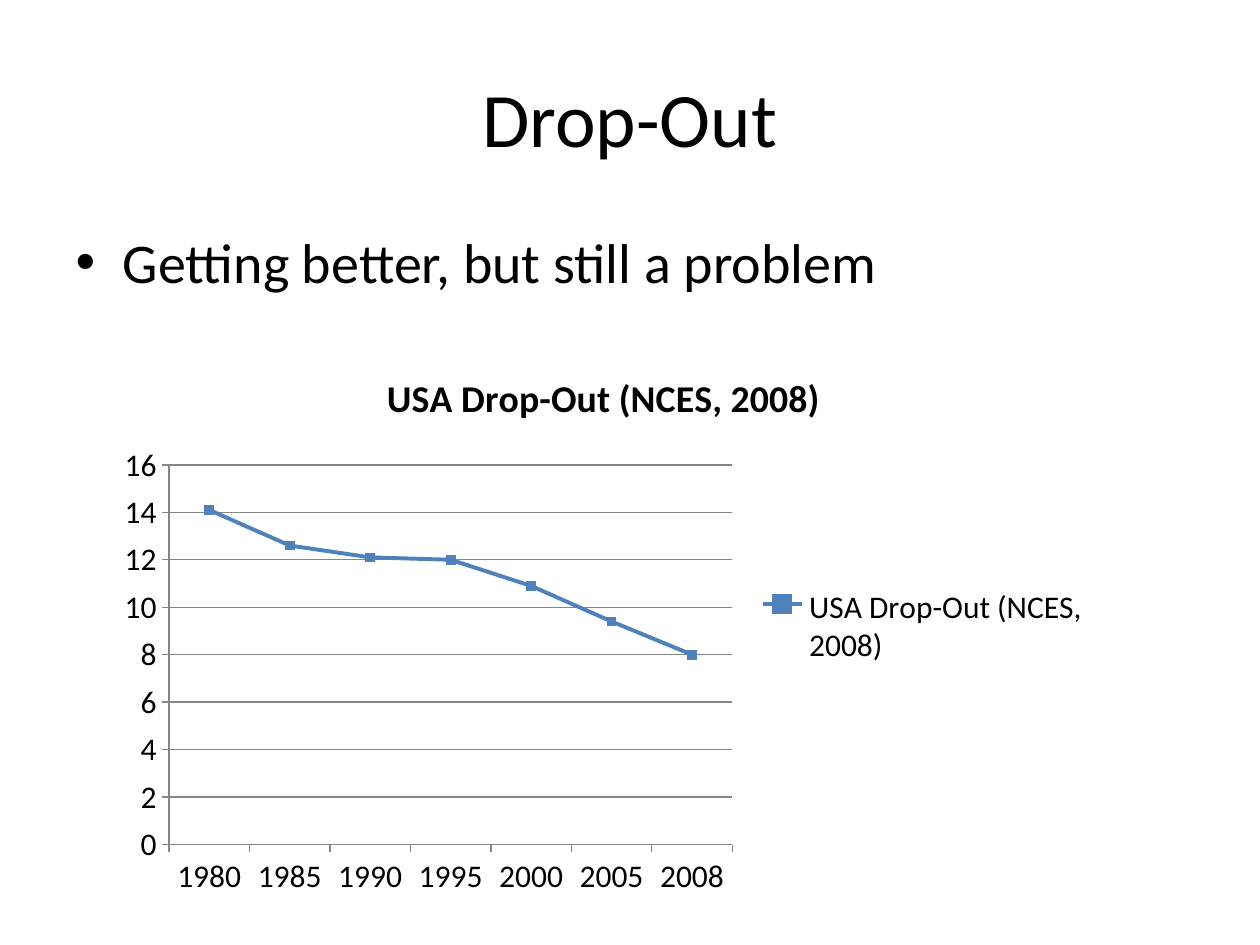
from lxml.etree import SubElement
from pptx import Presentation
from pptx.chart.data import CategoryChartData
from pptx.dml.color import RGBColor
from pptx.enum.chart import XL_CHART_TYPE as ChartType
from pptx.enum.chart import XL_LEGEND_POSITION as LegendPosition
from pptx.enum.chart import XL_MARKER_STYLE as MarkerStyle
from pptx.enum.chart import XL_TICK_MARK as TickMark
from pptx.enum.text import MSO_ANCHOR as Anchor
from pptx.enum.text import PP_ALIGN as Align
from pptx.oxml.ns import qn
from pptx.util import Cm, Pt

# Content
TITLE = "Drop-Out"
BULLETS = ["Getting better, but still a problem"]
SERIES_NAME = "USA Drop-Out (NCES, 2008)"
DROP_OUT = {
    "1980": 14.1, "1985": 12.6, "1990": 12.1, "1995": 12,
    "2000": 10.9, "2005": 9.4, "2008": 8,
}

# Theme and layout
THEME = {
    "font": "Calibri",
    "text": RGBColor(0, 0, 0),
    "line": RGBColor(0x4F, 0x81, 0xBD),
    "grid": RGBColor(0x86, 0x86, 0x86),
    "title": Pt(44),
    "body": Pt(32),
    "chart": Pt(18),
    "chart_title": Pt(21.6),
}
SLIDE_SIZE = Cm(25.4), Cm(19.05)
TITLE_BOX = Cm(1.27), Cm(0.76), Cm(22.86), Cm(3.18)
BODY_BOX = Cm(1.27), Cm(4.45), Cm(22.86), Cm(12.57)
CHART_BOX = Cm(2.11), Cm(6.99), Cm(20.12), Cm(11.28)
BULLET_INDENT = Cm(0.95)


def style_font(font, size, bold=False):
    font.name = THEME["font"]
    font.size = THEME[size]
    font.bold = bold
    font.color.rgb = THEME["text"]


def place(shape, box):
    shape.left, shape.top, shape.width, shape.height = box


def add_bullet(paragraph):
    properties = paragraph._p.get_or_add_pPr()
    properties.set("marL", str(BULLET_INDENT))
    properties.set("indent", str(-BULLET_INDENT))
    SubElement(properties, qn("a:buFont"), typeface="Arial")
    SubElement(properties, qn("a:buChar"), char="•")


def fill_title(shape):
    place(shape, TITLE_BOX)
    frame = shape.text_frame
    frame.text = TITLE
    frame.vertical_anchor = Anchor.MIDDLE
    frame.paragraphs[0].alignment = Align.CENTER
    style_font(frame.paragraphs[0].font, "title")


def fill_body(shape):
    place(shape, BODY_BOX)
    frame = shape.text_frame
    frame.text = "\n".join(BULLETS)
    frame.vertical_anchor = Anchor.TOP
    for paragraph in frame.paragraphs:
        paragraph.space_before = Pt(6.4)
        add_bullet(paragraph)
        style_font(paragraph.font, "body")


def add_drop_out_chart(slide):
    data = CategoryChartData()
    data.categories = list(DROP_OUT)
    data.add_series(SERIES_NAME, list(DROP_OUT.values()))
    chart = slide.shapes.add_chart(ChartType.LINE_MARKERS, *CHART_BOX, data).chart
    style_font(chart.font, "chart")

    # Title and legend
    chart.has_title = True
    chart.chart_title.include_in_layout = False
    chart.chart_title.text_frame.text = SERIES_NAME
    style_font(chart.chart_title.text_frame.paragraphs[0].font, "chart_title", bold=True)
    chart.has_legend = True
    chart.legend.position = LegendPosition.RIGHT
    chart.legend.include_in_layout = False

    # Axes
    value_axis = chart.value_axis
    value_axis.minimum_scale, value_axis.maximum_scale = 0, 16
    value_axis.major_unit = 2
    value_axis.has_major_gridlines = True
    for axis in (chart.category_axis, value_axis):
        axis.major_tick_mark = TickMark.OUTSIDE
        axis.minor_tick_mark = TickMark.NONE
    for part in (chart.category_axis, value_axis, value_axis.major_gridlines):
        part.format.line.color.rgb = THEME["grid"]
        part.format.line.width = Pt(0.75)

    # Series
    chart.plots[0].vary_by_categories = False
    series = chart.plots[0].series[0]
    series.smooth = False
    series.format.line.color.rgb = THEME["line"]
    series.format.line.width = Pt(2.25)
    marker = series.marker
    marker.style = MarkerStyle.SQUARE
    marker.size = 5
    marker.format.fill.solid()
    marker.format.fill.fore_color.rgb = THEME["line"]
    marker.format.line.color.rgb = THEME["line"]


def main():
    presentation = Presentation()
    presentation.slide_width, presentation.slide_height = SLIDE_SIZE
    slide = presentation.slides.add_slide(presentation.slide_layouts[1])
    fill_title(slide.shapes.title)
    fill_body(slide.placeholders[1])
    add_drop_out_chart(slide)
    presentation.save("out.pptx")


if __name__ == "__main__":
    main()
